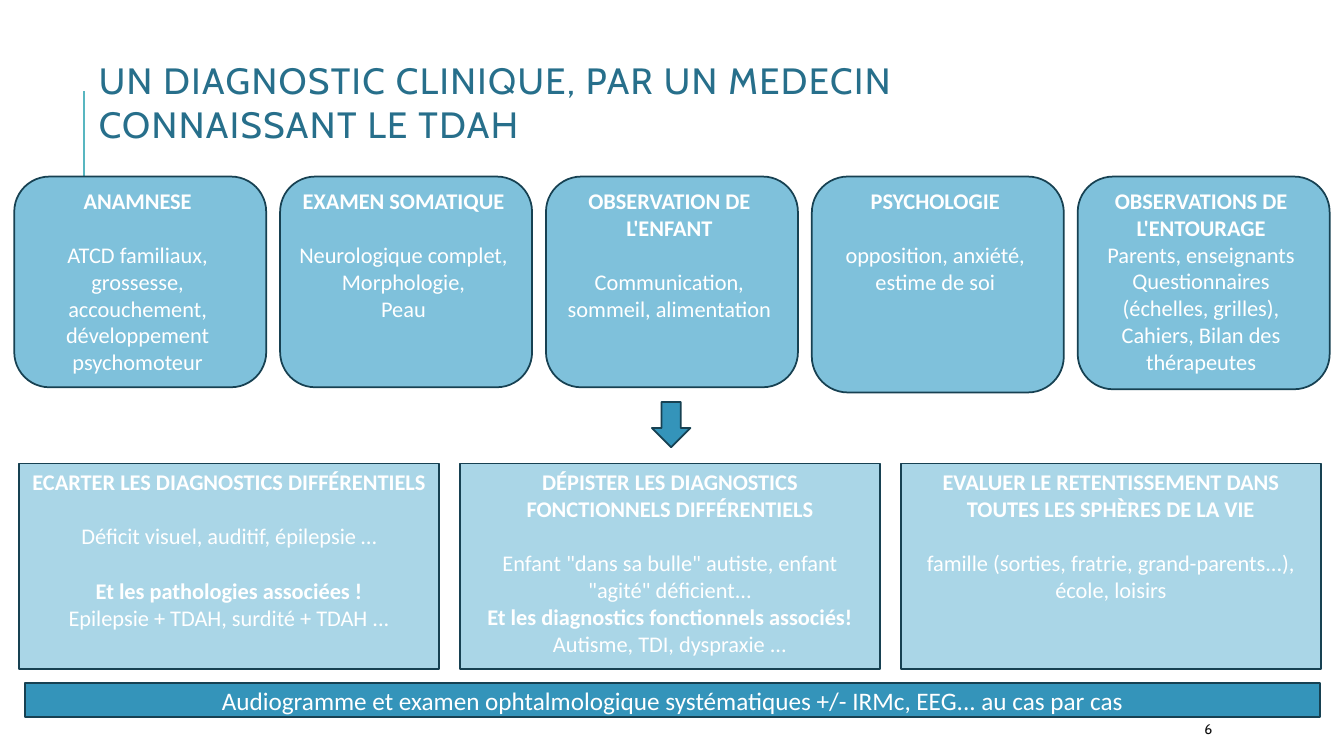
import pptx
import pptx.dml.color
import pptx.enum.shapes
import pptx.enum.text
import pptx.oxml.ns
import pptx.util
from lxml import etree

Cm, Pt = pptx.util.Cm, pptx.util.Pt
SHAPES = pptx.enum.shapes.MSO_SHAPE
ALIGN = pptx.enum.text.PP_ALIGN
ANCHOR = pptx.enum.text.MSO_ANCHOR

COLORS = {"title": "276F8B", "rule": "58B6C0", "border": "174152", "exam": "7FC1DB",
          "goal": "AAD6E7", "accent": "3494BA", "text": "FFFFFF", "number": "0D0D0D"}
BLANK_LINE = 19.5  # points, one line of 16 pt text


class Slide:
    def __init__(self, deck):
        self.slide = deck.slides.add_slide(deck.slide_layouts[6])
        self.shapes = self.slide.shapes

    def color(self, name):
        return pptx.dml.color.RGBColor.from_string(COLORS[name])

    def run(self, paragraph, text, size, color, font="Calibri", bold=False):
        run = paragraph.add_run()
        run.text = text
        run.font.size, run.font.name, run.font.bold = Pt(size), font, bold
        run.font.color.rgb = self.color(color)
        return run

    def label(self, box, text, size, color, anchor, spacing=0, line_spacing=None):
        """Single-paragraph text box; spacing is in points between letters."""
        frame = self.shapes.add_textbox(*map(Cm, box)).text_frame
        frame.word_wrap, frame.vertical_anchor = True, anchor
        paragraph = frame.paragraphs[0]
        paragraph.line_spacing = line_spacing
        run = self.run(paragraph, text, size, color, "Cabin")
        if spacing:
            run.font._element.set("spc", str(spacing * 100))

    def rule(self, x, top, bottom):
        line = self.shapes.add_connector(pptx.enum.shapes.MSO_CONNECTOR.STRAIGHT,
                                         Cm(x), Cm(bottom), Cm(x), Cm(top))
        line.line.color.rgb, line.line.width = self.color("rule"), Pt(1.5)
        etree.SubElement(line._element.spPr, pptx.oxml.ns.qn("a:effectLst"))

    def block(self, kind, box, fill):
        shape = self.shapes.add_shape(kind, *map(Cm, box))
        shape.shadow.inherit = False
        shape.fill.solid()
        shape.fill.fore_color.rgb = self.color(fill)
        shape.line.color.rgb, shape.line.width = self.color("border"), Pt(1.25)
        return shape

    def panel(self, kind, box, fill, paragraphs, size=16, anchor=ANCHOR.TOP, tight=False):
        """Block with centred text; paragraphs are (blank lines before, [(text, bold)])."""
        frame = self.block(kind, box, fill).text_frame
        frame.word_wrap, frame.vertical_anchor = True, anchor
        if tight:
            frame.margin_left = frame.margin_top = frame.margin_bottom = 0
            frame.margin_right = Cm(0.13)
        for index, (gap, runs) in enumerate(paragraphs):
            paragraph = frame.add_paragraph() if index else frame.paragraphs[0]
            paragraph.alignment = ALIGN.CENTER
            if gap:
                paragraph.space_before = Pt(gap * BLANK_LINE)
            for text, bold in runs:
                self.run(paragraph, text, size, "text", bold=bold)


# height, heading, blank lines under the heading, body lines
EXAMS = [
    (5.31, "ANAMNESE", 1,
     ["ATCD familiaux, grossesse, accouchement, développement psychomoteur"]),
    (5.31, "EXAMEN SOMATIQUE", 1, ["Neurologique complet,", "Morphologie,", "Peau"]),
    (5.31, "OBSERVATION DE L'ENFANT", 1, ["Communication, sommeil, alimentation"]),
    (5.44, "PSYCHOLOGIE", 1, ["opposition, anxiété, estime de soi"]),
    (5.36, "OBSERVATIONS DE L'ENTOURAGE", 0,
     ["Parents, enseignants", "Questionnaires",
      "(échelles, grilles), Cahiers, Bilan des thérapeutes"]),
]

GOALS = [
    [(0, [("ECARTER LES DIAGNOSTICS DIFFÉRENTIELS", True)]),
     (1, [("Déficit visuel, auditif, épilepsie …", False)]),
     (1, [("Et les pathologies associées !", True)]),
     (0, [("Epilepsie + TDAH, surdité + TDAH ...", False)])],
    [(0, [("DÉPISTER LES DIAGNOSTICS FONCTIONNELS DIFFÉRENTIELS", True)]),
     (1, [("Enfant \"dans sa bulle\" autiste, enfant \"agité\" déficient...", False)]),
     (0, [("Et les diagnostics fonctionnels associés!", True),
          (" Autisme, TDI, dyspraxie ...", False)])],
    [(0, [("EVALUER LE RETENTISSEMENT DANS TOUTES LES SPHÈRES DE LA VIE", True)]),
     (1, [("famille (sorties, fratrie, grand-parents...), école, loisirs", False)])],
]


def main():
    deck = pptx.Presentation()
    deck.slide_width, deck.slide_height = Cm(33.87), Cm(19.05)
    slide = Slide(deck)

    slide.rule(2.11, 2.29, 4.83)
    slide.label((2.24, 1.85, 22.99, 1.42),
                "UN DIAGNOSTIC CLINIQUE, PAR UN MEDECIN CONNAISSANT LE TDAH",
                26.1, "title", ANCHOR.MIDDLE, spacing=1, line_spacing=1.02)
    slide.label((30.1, 17.98, 2.69, 0.76), "6", 10, "number", ANCHOR.MIDDLE)

    for column, (height, heading, gap, lines) in enumerate(EXAMS):
        body = [(0 if row else gap, [(line, False)]) for row, line in enumerate(lines)]
        slide.panel(SHAPES.ROUNDED_RECTANGLE, (0.36 + 6.7 * column, 4.45, 6.35, height),
                    "exam", [(0, [(heading, True)])] + body, tight=True)

    slide.block(SHAPES.DOWN_ARROW, (16.43, 10.13, 0.97, 1.14), "accent")

    for column, paragraphs in enumerate(GOALS):
        slide.panel(SHAPES.RECTANGLE, (0.48 + 11.11 * column, 11.68, 10.59, 5.18),
                    "goal", paragraphs)

    slide.panel(SHAPES.RECTANGLE, (0.63, 17.22, 32.64, 0.84), "accent",
                [(0, [("Audiogramme et examen ophtalmologique systématiques "
                       "+/- IRMc, EEG... au cas par cas", False)])],
                size=18, anchor=ANCHOR.MIDDLE)

    deck.save("out.pptx")


if __name__ == "__main__":
    main()
